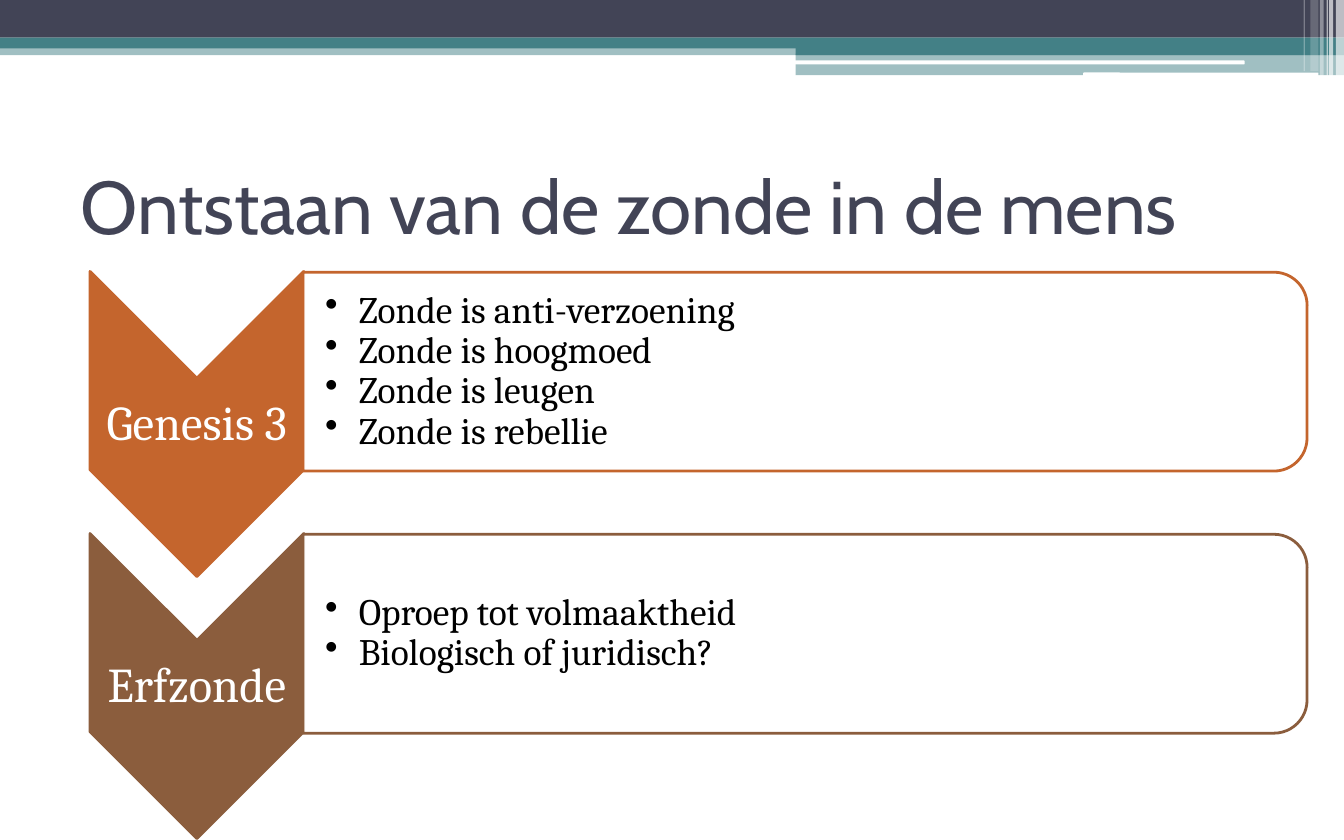
import pptx
import pptx.util
import pptx.dml.color
import pptx.enum.shapes
import pptx.enum.text
import pptx.oxml
import pptx.oxml.ns

Inches = pptx.util.Inches
Pt = pptx.util.Pt
RGB = pptx.dml.color.RGBColor.from_string
SHAPE = pptx.enum.shapes.MSO_SHAPE
ALIGN = pptx.enum.text.PP_ALIGN
NS = pptx.oxml.ns.nsdecls("a")

COLORS = {
    "white": "FFFFFF",
    "black": "000000",
    "slate": "424456",
    "teal": "438086",
    "orange": "C4652D",
    "brown": "8B5D3D",
}

deck = pptx.Presentation()
deck.slide_width, deck.slide_height = Inches(10), Inches(6.25)
slide = deck.slides.add_slide(deck.slide_layouts[6])


def add_filled(preset, box, color, opacity=100, outline=None):
    """Add a shape with a solid, possibly transparent, fill and optional outline."""
    shape = slide.shapes.add_shape(preset, *map(Inches, box))
    shape.shadow.inherit = False
    shape.fill.solid()
    shape.fill.fore_color.rgb = RGB(COLORS[color])
    if opacity < 100:
        fill_color = shape.fill._xPr.find(".//" + pptx.oxml.ns.qn("a:srgbClr"))
        fill_color.append(pptx.oxml.parse_xml(f'<a:alpha {NS} val="{opacity * 1000}"/>'))
    if outline:
        shape.line.color.rgb = RGB(COLORS[outline])
        shape.line.width = Pt(1.5)
    else:
        shape.line.fill.background()
    return shape


def add_text(box, lines, font, color, paragraph_format, insets=(0.1, 0.05, 0.1, 0.05)):
    """Add a vertically centred text box and return its paragraphs."""
    frame = slide.shapes.add_textbox(*map(Inches, box)).text_frame
    left, top, right, bottom = map(Inches, insets)
    frame_format = {
        "word_wrap": True,
        "vertical_anchor": pptx.enum.text.MSO_ANCHOR.MIDDLE,
        "margin_left": left,
        "margin_top": top,
        "margin_right": right,
        "margin_bottom": bottom,
        "text": "\n".join(lines),
    }
    for name, value in frame_format.items():
        setattr(frame, name, value)
    for paragraph in frame.paragraphs:
        for name, value in paragraph_format.items():
            setattr(paragraph, name, value)
        run_font = paragraph.runs[0].font
        for name, value in font.items():
            setattr(run_font, name, value)
        run_font.color.rgb = RGB(COLORS[color])
    return frame.paragraphs


# Header bands
for box, color, opacity in [
    ((0, 0.33, 10, 0.08), "teal", 50),
    ((0, 0, 10, 0.28), "slate", 100),
    ((0, 0.28, 10, 0.08), "teal", 100),
    ((5.92, 0.33, 4.08, 0.08), "teal", 100),
    ((5.92, 0.4, 4.08, 0.16), "teal", 50),
]:
    add_filled(SHAPE.RECTANGLE, box, color, opacity)

for box in [(5.91, 0.45, 3.35, 0.03), (8.06, 0.54, 1.75, 0.03)]:
    add_filled(SHAPE.ROUNDED_RECTANGLE, box, "white")

# Translucent stripes at the right end of the header
for left, width, height, opacity in [
    (9.94, 0.06, 0.57, 65),
    (9.89, 0.03, 0.57, 65),
    (9.87, 0.01, 0.57, 60),
    (9.82, 0.03, 0.57, 40),
    (9.75, 0.06, 0.53, 20),
    (9.7, 0.01, 0.53, 30),
]:
    add_filled(SHAPE.RECTANGLE, (left, 0, width, height), "white", opacity)

add_text((0.5, 1.04, 9, 0.97), ["Ontstaan van de zonde in de mens"],
         {"name": "Cabin", "size": Pt(40)}, "slate", {"alignment": ALIGN.LEFT})

# Chevron list: one topic per row
topics = [
    ("Genesis 3", "orange", [
        "Zonde is anti-verzoening",
        "Zonde is hoogmoed",
        "Zonde is leugen",
        "Zonde is rebellie",
    ]),
    ("Erfzonde", "brown", [
        "Oproep tot volmaaktheid",
        "Biologisch of juridisch?",
    ]),
]
ROW_PITCH = 1.95

for row, (topic, color, points) in enumerate(topics):
    drop = row * ROW_PITCH
    chevron = add_filled(SHAPE.CHEVRON, (0.33, 2.36 + drop, 2.27, 1.59), color, outline=color)
    chevron.rotation = 90
    add_text((0.67, 2.82 + drop, 1.59, 0.68), [topic],
             {"name": "Cambria", "size": Pt(26)}, "white",
             {"alignment": ALIGN.CENTER, "line_spacing": 0.9}, (0.02,) * 4)

    panel = add_filled(SHAPE.ROUND_2_SAME_RECTANGLE, (5.25, -0.97 + drop, 1.48, 7.47),
                       "white", 90, color)
    panel.rotation = 90
    bullets = add_text((2.26, 2.1 + drop, 7.39, 1.33), points,
                       {"name": "Cambria", "size": Pt(20)}, "black",
                       {"alignment": ALIGN.LEFT, "level": 1, "line_spacing": 0.9,
                        "space_after": Pt(0)},
                       (0.16, 0.01, 0.01, 0.01))
    for bullet in bullets:
        properties = bullet._p.get_or_add_pPr()
        properties.set("marL", str(Inches(0.25)))
        properties.set("indent", str(-Inches(0.25)))
        properties.append(pptx.oxml.parse_xml(f'<a:buChar {NS} char="•"/>'))

deck.save("out.pptx")
